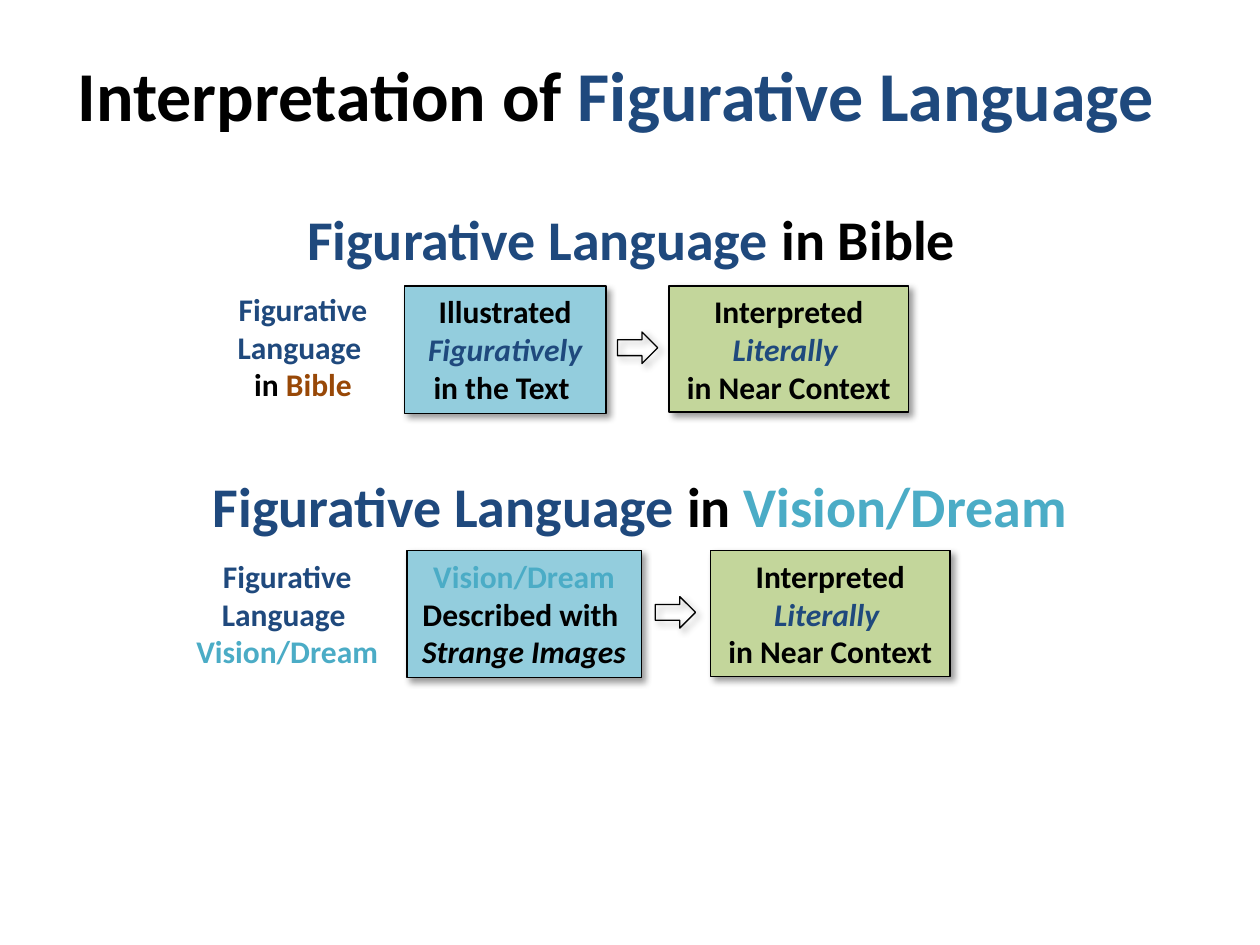
from lxml import etree
from pptx import Presentation
from pptx.dml.color import RGBColor
from pptx.enum import shapes, text
from pptx.oxml import ns
from pptx.util import Inches, Pt

THEME = {
    "font": "Calibri",
    "title": 40, "heading": 32, "body": 18, "line": 0.75,
    "black": "000000", "navy": "1F497D", "aqua": "4BACC6", "brown": "984807",
    "blue box": "93CDDD", "green box": "C3D69B",
}

# A paragraph is a list of runs: (words, colour, italic)
FIGURATIVE = ("Figurative Language ", "navy", False)
TITLE = [[("Interpretation of ", "black", False), FIGURATIVE]]
INTERPRETED = [
    [("Interpreted", "black", False)],
    [("Literally ", "navy", True)],
    [("in Near Context", "black", False)],
]
# Places are (left, top, width, height) in inches
FLOWS = [
    {
        "heading": [[FIGURATIVE, ("in Bible", "black", False)]],
        "heading at": (0.01, 1.57, 10, 0.64),
        "subject": [[FIGURATIVE],
                    [("in ", "black", False), ("Bible", "brown", False)]],
        "subject at": (1.69, 2.25, 1.43, 1.01),
        "depiction": [[("Illustrated", "black", False)],
                      [("Figuratively ", "navy", True),
                       ("in the Text ", "black", False)]],
        "depiction at": (3.21, 2.27, 1.6, 1.01),
        "arrow left": 4.9,
        "meaning left": 5.31,
    },
    {
        "heading": [[FIGURATIVE, ("in ", "black", False),
                     ("Vision/Dream", "aqua", False)]],
        "heading at": (0.08, 3.69, 10, 0.64),
        "subject": [[FIGURATIVE], [("Vision/Dream", "aqua", False)]],
        "subject at": (1.43, 4.37, 1.7, 1.01),
        "depiction": [[("Vision/Dream", "aqua", False)],
                      [("Described with ", "black", False)],
                      [("Strange Images", "black", True)]],
        "depiction at": (3.23, 4.37, 1.86, 1.01),
        "arrow left": 5.2,
        "meaning left": 5.64,
    },
]
MEANING_SIZE = (1.9, 1)
ARROW_SIZE = (0.32, 0.25)
ARROW_DROP = 0.365


def rgb(name):
    return RGBColor.from_string(THEME[name])


def fill_shadow(effects):
    shadow = etree.SubElement(effects, ns.qn("a:outerShdw"), blurRad=str(Pt(4)),
                              dist=str(Pt(3)), dir=str(45 * 60000),
                              algn="tl", rotWithShape="0")
    color = etree.SubElement(shadow, ns.qn("a:srgbClr"), val=THEME["black"])
    etree.SubElement(color, ns.qn("a:alpha"), val="40000")


def write(shape, paragraphs, size, anchor=text.MSO_ANCHOR.TOP, shadow=False):
    frame = shape.text_frame
    frame.word_wrap = True
    frame.auto_size = text.MSO_AUTO_SIZE.NONE
    frame.vertical_anchor = anchor
    for index, runs in enumerate(paragraphs):
        paragraph = frame.add_paragraph() if index else frame.paragraphs[0]
        paragraph.alignment = text.PP_ALIGN.CENTER
        for words, color, italic in runs:
            run = paragraph.add_run()
            run.text = words
            font = run.font
            font.name, font.size = THEME["font"], Pt(THEME[size])
            font.bold, font.italic = True, italic
            font.color.rgb = rgb(color)
            if shadow:
                effects = etree.Element(ns.qn("a:effectLst"))
                fill_shadow(effects)
                run.font._element.find(ns.qn("a:solidFill")).addnext(effects)


def add_label(slide, place, paragraphs, size, **style):
    label = slide.shapes.add_textbox(*map(Inches, place))
    write(label, paragraphs, size, **style)


def add_outlined(slide, kind, place, fill=None):
    """Add a preset shape with a thin black line and a soft shadow."""
    shape = slide.shapes.add_shape(kind, *map(Inches, place))
    if fill:
        shape.fill.solid()
        shape.fill.fore_color.rgb = rgb(fill)
    else:
        shape.fill.background()
    shape.line.color.rgb = rgb("black")
    shape.line.width = Pt(THEME["line"])
    shape.shadow.inherit = False
    fill_shadow(shape._element.spPr.find(ns.qn("a:effectLst")))
    return shape


def add_flow(slide, flow):
    kinds = shapes.MSO_SHAPE
    top = flow["depiction at"][1]
    add_label(slide, flow["heading at"], flow["heading"], "heading",
              anchor=text.MSO_ANCHOR.MIDDLE, shadow=True)
    add_label(slide, flow["subject at"], flow["subject"], "body")
    depiction = add_outlined(slide, kinds.RECTANGLE, flow["depiction at"],
                             "blue box")
    write(depiction, flow["depiction"], "body")
    add_outlined(slide, kinds.RIGHT_ARROW,
                 (flow["arrow left"], top + ARROW_DROP, *ARROW_SIZE))
    meaning = add_outlined(slide, kinds.RECTANGLE,
                           (flow["meaning left"], top, *MEANING_SIZE),
                           "green box")
    write(meaning, INTERPRETED, "body")


def main():
    deck = Presentation()
    deck.slide_width, deck.slide_height = Inches(10), Inches(7.5)
    slide = deck.slides.add_slide(deck.slide_layouts[5])
    title = slide.shapes.title
    title.left, title.top = Inches(-0.05), Inches(0.36)
    title.width, title.height = Inches(10), Inches(0.77)
    write(title, TITLE, "title", anchor=text.MSO_ANCHOR.MIDDLE, shadow=True)
    for flow in FLOWS:
        add_flow(slide, flow)
    deck.save("out.pptx")


if __name__ == "__main__":
    main()
